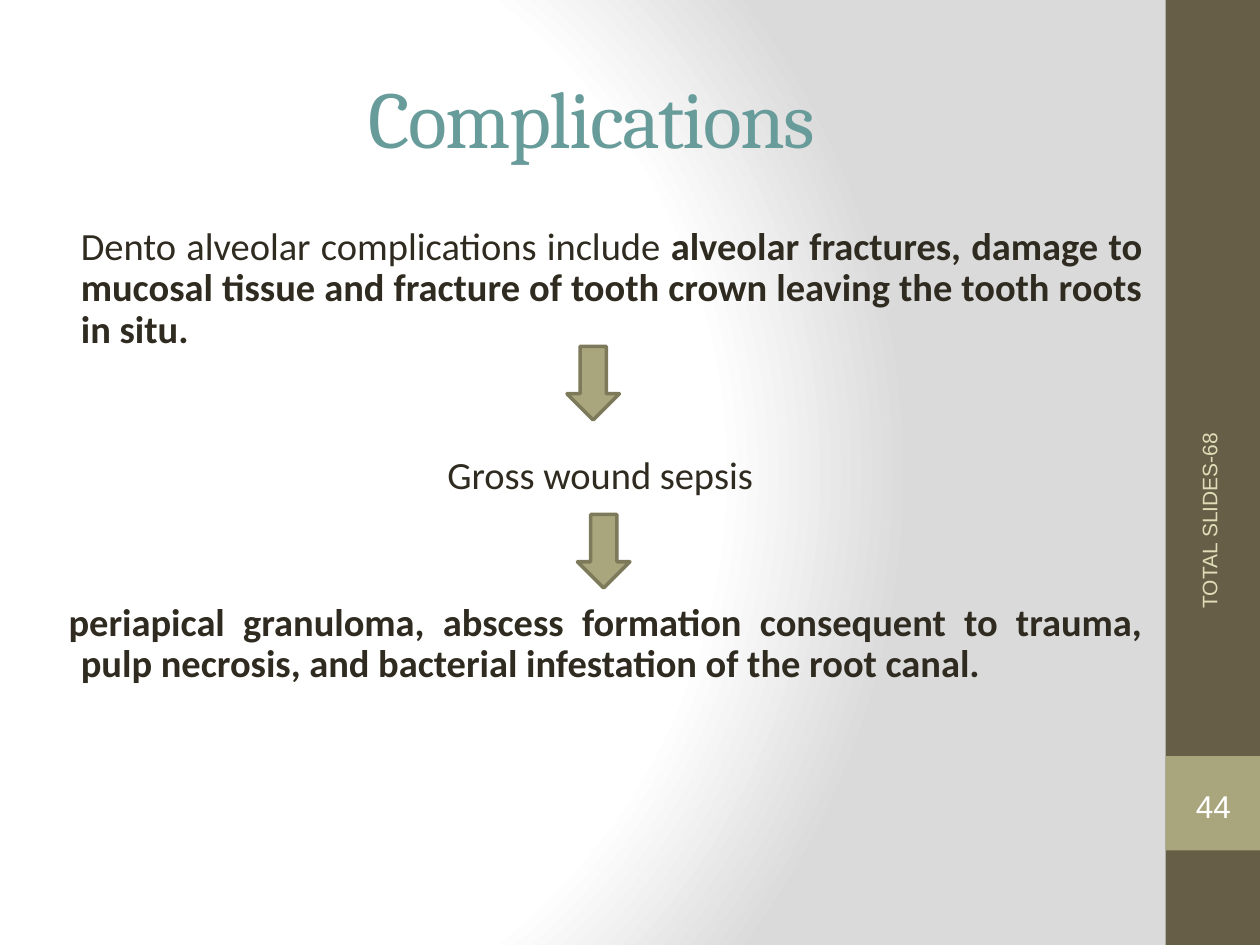
from lxml import etree
from pptx import Presentation
from pptx import util as u
from pptx.dml.color import RGBColor
from pptx.enum import shapes, text
from pptx.oxml import ns

WHITE = RGBColor(0xFF, 0xFF, 0xFF)
GREY = RGBColor(0xDA, 0xDA, 0xDA)
BROWN = RGBColor(0x67, 0x5E, 0x47)
OLIVE = RGBColor(0xA9, 0xA5, 0x7C)
OLIVE_DARK = RGBColor(0x7D, 0x7A, 0x5C)
TEAL = RGBColor(0x68, 0x9C, 0x9A)
INK = RGBColor(0x2F, 0x2B, 0x20)
CREAM = RGBColor(0xDF, 0xDC, 0xB7)

ALIGN = text.PP_ALIGN
SHAPE = shapes.MSO_SHAPE

TITLE_FONT = {"name": "Cambria", "size": u.Pt(46), "color": TEAL}
BODY_FONT = {"name": "Calibri", "size": u.Pt(22), "color": INK}
FOOTER_FONT = {"name": "Arial", "size": u.Pt(12), "color": CREAM}
NUMBER_FONT = {"name": "Arial", "size": u.Pt(18), "color": WHITE}

# Each step: alignment, left margin, first-line indent, space before, runs
STEPS = [
    (ALIGN.JUSTIFY, 27, 0, 4.4, [
        ("Dento alveolar complications include ", False),
        ("alveolar fractures, damage to mucosal tissue and fracture of "
         "tooth crown leaving the tooth roots in situ.", True)]),
    (ALIGN.CENTER, 14, 0, 60, [("Gross wound sepsis", False)]),
    (ALIGN.JUSTIFY, 27, -7, 60, [
        ("periapical granuloma, abscess formation consequent to trauma, "
         "pulp necrosis, and bacterial infestation of the root canal.", True)]),
]


def set_values(target, values):
    for name, value in values.items():
        setattr(target, name, value)


class SlideBuilder:
    """Holds the current slide; all lengths are in points."""

    def __init__(self, slide):
        self.slide = slide

    def place(self, shape, left, top, width, height):
        set_values(shape, {"left": u.Pt(left), "top": u.Pt(top),
                           "width": u.Pt(width), "height": u.Pt(height)})

    def run(self, paragraph, words, style, bold=False):
        run = paragraph.add_run()
        run.text = words
        set_values(run.font, {"name": style["name"], "size": style["size"],
                              "bold": bold})
        run.font.color.rgb = style["color"]
        return run

    def indent(self, paragraph, margin, first_line=0):
        properties = paragraph._p.get_or_add_pPr()
        properties.set("marL", str(u.Pt(margin)))
        properties.set("indent", str(u.Pt(first_line)))
        etree.SubElement(properties, ns.qn("a:buNone"))

    def background(self):
        """Circular gradient that stays white for three quarters of its reach."""
        fill = self.slide.background.fill
        fill.gradient()
        gradient = fill._fill._gradFill
        for child in list(gradient):
            gradient.remove(child)
        stops = etree.SubElement(gradient, ns.qn("a:gsLst"))
        for position, color in ((0, WHITE), (75, WHITE), (100, GREY)):
            stop = etree.SubElement(stops, ns.qn("a:gs"), pos=str(position * 1000))
            etree.SubElement(stop, ns.qn("a:srgbClr"), val=str(color))
        circle = etree.SubElement(gradient, ns.qn("a:path"), path="circle")
        etree.SubElement(circle, ns.qn("a:fillToRect"),
                         l="20000", t="50000", r="100000", b="50000")

    def shape(self, kind, box, fill=None, line=None, line_width=2):
        shape = self.slide.shapes.add_shape(kind, *map(u.Pt, box))
        shape.shadow.inherit = False
        for format_fill, color in ((shape.fill, fill), (shape.line.fill, line)):
            if color is None:
                format_fill.background()
            else:
                format_fill.solid()
                format_fill.fore_color.rgb = color
        if line is not None:
            shape.line.width = u.Pt(line_width)
        return shape

    def title(self, words, box):
        title = self.slide.shapes.title
        self.place(title, *box)
        set_values(title.text_frame, {"vertical_anchor": text.MSO_ANCHOR.MIDDLE,
                                      "auto_size": text.MSO_AUTO_SIZE.NONE})
        paragraph = title.text_frame.paragraphs[0]
        paragraph.alignment = ALIGN.CENTER
        self.indent(paragraph, 4.5)
        run = self.run(paragraph, words, TITLE_FONT)
        run.font._element.set("spc", "-100")

    def body(self, steps, box):
        body = self.slide.placeholders[1]
        self.place(body, *box)
        frame = body.text_frame
        frame.auto_size = text.MSO_AUTO_SIZE.NONE
        for index, (alignment, margin, first_line, before, runs) in enumerate(steps):
            paragraph = frame.add_paragraph() if index else frame.paragraphs[0]
            set_values(paragraph, {"alignment": alignment, "line_spacing": 0.9,
                                   "space_before": u.Pt(before)})
            self.indent(paragraph, margin, first_line)
            for words, bold in runs:
                self.run(paragraph, words, BODY_FONT, bold)

    def label(self, shape, words, style, alignment, margins=None):
        frame = shape.text_frame
        set_values(frame, {"word_wrap": True,
                           "vertical_anchor": text.MSO_ANCHOR.MIDDLE})
        if margins is not None:
            set_values(frame, {f"margin_{side}": u.Pt(margins)
                               for side in ("left", "top", "right", "bottom")})
        paragraph = frame.paragraphs[0]
        paragraph.alignment = alignment
        self.run(paragraph, words, style)

    def footer(self, words, box):
        footer = self.slide.shapes.add_textbox(*map(u.Pt, box))
        footer.rotation = 270
        self.label(footer, words, FOOTER_FONT, ALIGN.RIGHT)


def main():
    presentation = Presentation()
    set_values(presentation, {"slide_width": u.Pt(720), "slide_height": u.Pt(540)})
    slide = presentation.slides.add_slide(presentation.slide_layouts[1])
    builder = SlideBuilder(slide)

    builder.background()
    builder.shape(SHAPE.RECTANGLE, (666, 0, 54, 540), BROWN)
    builder.shape(SHAPE.RECTANGLE, (666, 432, 54, 54), OLIVE)
    builder.title("Complications", (36, 21.6, 600, 90))
    builder.body(STEPS, (12, 126, 648, 396))
    builder.footer("TOTAL SLIDES-68", (597.6, 319, 186.5, 28.8))

    number = builder.shape(SHAPE.DOUBLE_BRACKET, (671.8, 445, 43.2, 31))
    builder.label(number, "44", NUMBER_FONT, ALIGN.CENTER, margins=0)

    for left, top in ((324, 198), (330, 294)):
        builder.shape(SHAPE.DOWN_ARROW, (left, top, 30, 42), OLIVE, OLIVE_DARK)

    presentation.save("out.pptx")


if __name__ == "__main__":
    main()
